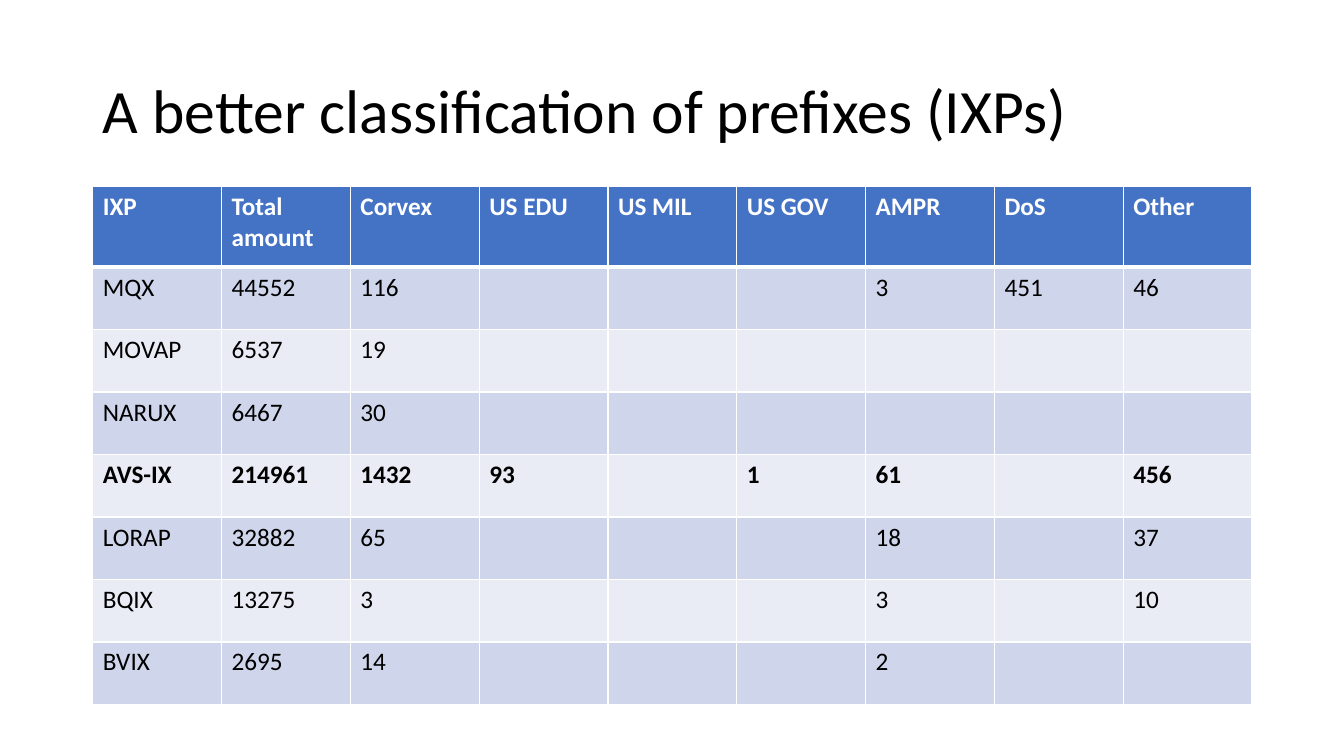
import pptx
import pptx.dml.color
import pptx.enum.text
import pptx.oxml.ns
import pptx.util
from lxml import etree
from pptx.util import Inches

FONT = "Calibri"
COLORS = {
    "text": "000000",
    "header": "4472C4",
    "header_text": "FFFFFF",
    "odd_row": "CFD5EA",
    "even_row": "E9EBF5",
    "border": "FFFFFF",
}

HEADINGS = ["IXP", "Total amount", "Corvex", "US EDU", "US MIL", "US GOV",
            "AMPR", "DoS", "Other"]
PREFIX_COUNTS = [
    ["MQX", "44552", "116", "", "", "", "3", "451", "46"],
    ["MOVAP", "6537", "19", "", "", "", "", "", ""],
    ["NARUX", "6467", "30", "", "", "", "", "", ""],
    ["AVS-IX", "214961", "1432", "93", "", "1", "61", "", "456"],
    ["LORAP", "32882", "65", "", "", "", "18", "", "37"],
    ["BQIX", "13275", "3", "", "", "", "3", "", "10"],
    ["BVIX", "2695", "14", "", "", "", "2", "", ""],
]
HIGHLIGHTED_IXP = "AVS-IX"


def rgb(name):
    return pptx.dml.color.RGBColor.from_string(COLORS[name])


def write_text(frame, text, *, size=18, color="text", bold=False, spacing=1.0):
    paragraph = frame.paragraphs[0]
    paragraph.alignment = pptx.enum.text.PP_ALIGN.LEFT
    paragraph.line_spacing = spacing
    paragraph.font.size = pptx.util.Pt(size)
    if text:
        run = paragraph.add_run()
        run.text = text
        run.font.name = FONT
        run.font.size = pptx.util.Pt(size)
        run.font.bold = bold
        run.font.color.rgb = rgb(color)


def set_borders(cell, **widths):
    qn = pptx.oxml.ns.qn
    properties = cell._tc.get_or_add_tcPr()
    for side in ("L", "R", "T", "B"):
        width = pptx.util.Pt(widths.get(side, 1))
        line = etree.SubElement(properties, qn(f"a:ln{side}"), w=str(width))
        fill = etree.SubElement(line, qn("a:solidFill"))
        etree.SubElement(fill, qn("a:srgbClr"), val=COLORS["border"])


def add_title(slide, text):
    title = slide.shapes.title
    title.left, title.top = Inches(0.92), Inches(0.4)
    title.width, title.height = Inches(11.5), Inches(1.45)
    title.text_frame.word_wrap = True
    title.text_frame.vertical_anchor = pptx.enum.text.MSO_ANCHOR.MIDDLE
    write_text(title.text_frame, text, size=44, spacing=0.9)


def add_prefix_table(slide):
    records = [HEADINGS] + PREFIX_COUNTS
    table = slide.shapes.add_table(
        len(records), len(HEADINGS),
        Inches(0.92), Inches(1.85), Inches(11.5), Inches(5.14)).table
    for column in table.columns:
        column.width = Inches(11.5 / len(HEADINGS))
    for index, record in enumerate(records):
        is_header = index == 0
        table.rows[index].height = Inches(0.8 if is_header else 0.62)
        band = "header" if is_header else "odd_row" if index % 2 else "even_row"
        for cell, text in zip(table.rows[index].cells, record):
            # The rule below the header is heavier than the grid
            set_borders(cell, T=3 if index == 1 else 1, B=3 if is_header else 1)
            cell.fill.solid()
            cell.fill.fore_color.rgb = rgb(band)
            write_text(cell.text_frame, text,
                       color="header_text" if is_header else "text",
                       bold=is_header or record[0] == HIGHLIGHTED_IXP)


def main():
    deck = pptx.Presentation()
    deck.slide_width, deck.slide_height = Inches(13.33), Inches(7.5)
    slide = deck.slides.add_slide(deck.slide_layouts.get_by_name("Title Only"))

    # Title
    add_title(slide, "A better classification of prefixes (IXPs)")

    # Prefix counts per exchange point
    add_prefix_table(slide)

    deck.save("out.pptx")


if __name__ == "__main__":
    main()
